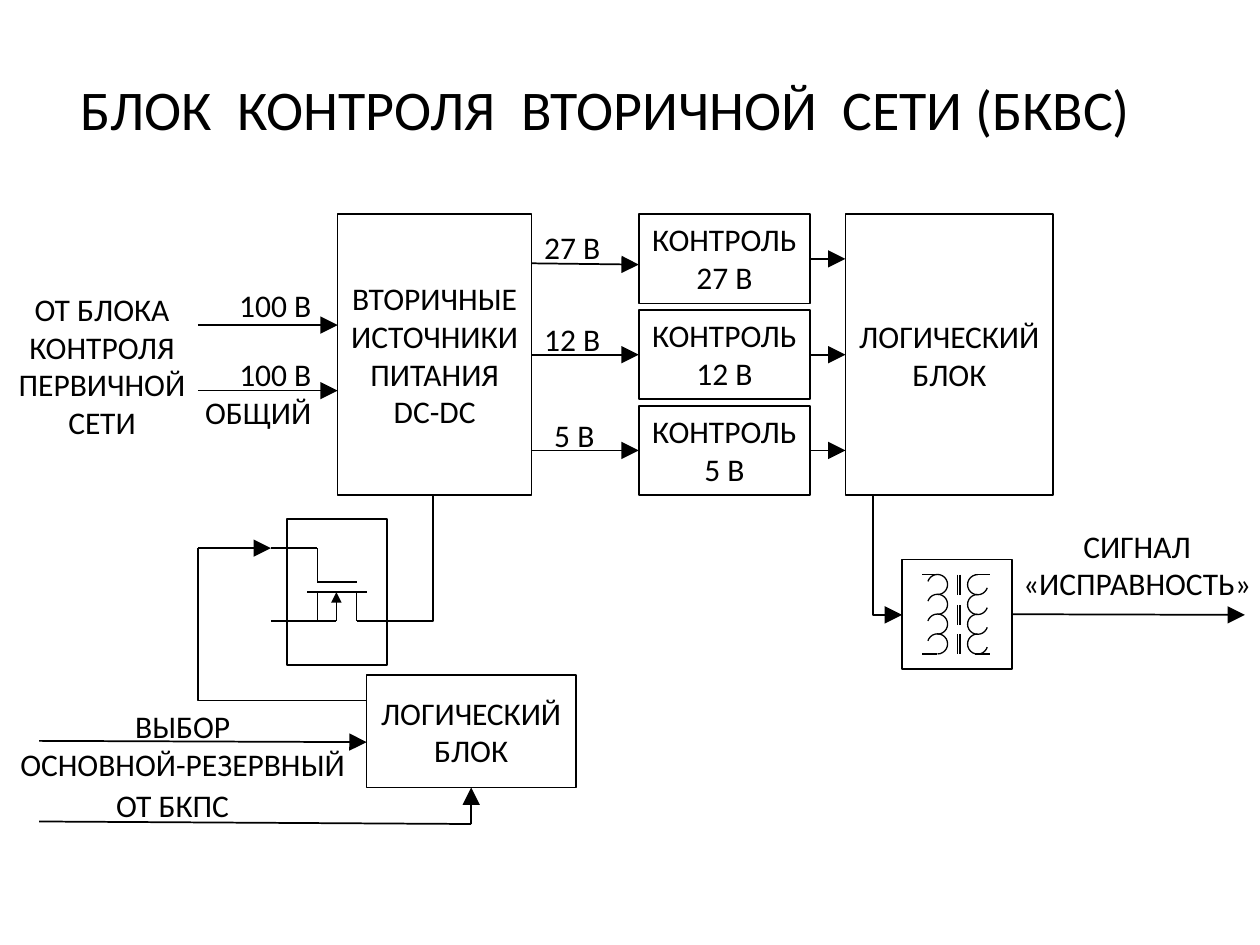
"""Block diagram of the secondary network control unit."""
from lxml.etree import SubElement
from pptx import Presentation
from pptx.dml.color import RGBColor
from pptx.enum.shapes import MSO_AUTO_SHAPE_TYPE as Preset, MSO_CONNECTOR as Link
from pptx.enum.text import MSO_ANCHOR as Anchor, MSO_AUTO_SIZE as Fit, PP_ALIGN as Align
from pptx.oxml.ns import qn
from pptx.util import Inches, Pt

COLORS = {"ink": "000000", "paper": "FFFFFF"}
COLUMNS, ROWS = 100, 75
TOP, LEFT, BOTTOM, RIGHT = range(4)


def write(shape, text, size=18, align=Align.CENTER, anchor=Anchor.TOP, wrap=False, fit=Fit.NONE):
    frame = shape.text_frame
    frame.text = text
    frame.word_wrap = wrap
    frame.auto_size = fit
    frame.vertical_anchor = anchor
    for paragraph in frame.paragraphs:
        paragraph.alignment = align
        paragraph.font.size = Pt(size)
        paragraph.font.name = "Calibri"
        paragraph.font.color.rgb = RGBColor.from_string(COLORS["ink"])


class Diagram:
    def __init__(self, deck):
        self.column = deck.slide_width / COLUMNS
        self.row = deck.slide_height / ROWS
        self.slide = deck.slides.add_slide(deck.slide_layouts[6])
        self.slide.background.fill.solid()
        self.slide.background.fill.fore_color.rgb = RGBColor.from_string(COLORS["paper"])
        self.layer = self.slide.shapes

    def group(self):
        self.layer = self.slide.shapes.add_group_shape().shapes

    def ungroup(self):
        self.layer = self.slide.shapes

    def place(self, x, y, width, height):
        return (round(x * self.column), round(y * self.row),
                round(width * self.column), round(height * self.row))

    def stroke(self, shape, weight):
        shape.line.color.rgb = RGBColor.from_string(COLORS["ink"])
        shape.line.width = Pt(weight)

    def outline(self, preset, area, weight=1):
        shape = self.layer.add_shape(preset, *self.place(*area))
        shape.shadow.inherit = False
        shape.fill.background()
        self.stroke(shape, weight)
        return shape

    def box(self, *area, text="", **style):
        shape = self.outline(Preset.RECTANGLE, area)
        if text:
            write(shape, text, **{"anchor": Anchor.MIDDLE, **style})
        return shape

    def label(self, *area, text, **style):
        write(self.layer.add_textbox(*self.place(*area)), text, **style)

    def coil_turn(self, x, y, size, rotation):
        turn = self.outline(Preset.ARC, (x, y, size, size), 0.75)
        turn.adjustments[0] = 64.9
        turn.rotation = rotation

    def line(self, *ends, kind=Link.STRAIGHT, arrow=None, weight=1, begin=None, end=None):
        link = self.layer.add_connector(kind, *self.place(*ends))
        self.stroke(link, weight)
        if begin:
            link.begin_connect(*begin)
        if end:
            link.end_connect(*end)
        if arrow:
            SubElement(link.line._get_or_add_ln(), qn("a:tailEnd"), type="triangle", w=arrow, len=arrow)
        properties = link._element.spPr
        SubElement(properties, qn("a:effectLst"))
        if kind == Link.ELBOW:
            guides = properties.find(qn("a:prstGeom")).get_or_add_avLst()
            SubElement(guides, qn("a:gd"), name="adj1", fmla="val 0")

    def arrow(self, *ends, **joins):
        self.line(*ends, arrow="lg", **joins)


def draw_transformer(diagram):
    diagram.group()
    for turn in range(4):
        for x, rotation in ((73.6, 90), (76.8, 270)):
            diagram.coil_turn(x, 45.6 + 1.57 * turn, 1.6, rotation)
    for y in (45.6, 48, 50.3):
        for x in (76, 76.2):
            diagram.line(x, y, x, y + 1.6, weight=0.75)
    for y in (45.6, 51.9):
        for x in (73.2, 77.4):
            diagram.line(x, y, x + 1.2, y, weight=0.75)
    case = diagram.box(71.6, 44.4, 8.7, 8.7)
    diagram.ungroup()
    return case


def draw_transistor(diagram):
    diagram.group()
    for ends in ((24.4, 47, 29.1, 47), (25.2, 46.2, 28.3, 46.2),
                 (25.2, 47, 25.2, 49.3), (28.3, 47, 28.3, 49.3),
                 (25.2, 43.5, 25.2, 46.2), (21.5, 43.5, 25.2, 43.5),
                 (21.5, 49.3, 26.7, 49.3), (28.3, 49.3, 32, 49.3)):
        diagram.line(*ends)
    diagram.line(26.7, 49.3, 26.7, 47, arrow="med")
    diagram.box(22.8, 41.2, 7.9, 11.6)
    diagram.ungroup()


def draw_controls(diagram, sources, logic):
    channels = (("27 В", 42.2, 17.6), ("12 В", 42.2, 24.9), ("5 В", 43, 32.5))
    for index, (voltage, label_x, label_y) in enumerate(channels):
        top = 17 + 7.6 * index
        middle = top + 3.55
        control = diagram.box(50.7, top, 13.6, 7.1, text=f"КОНТРОЛЬ\n{voltage}",
                              anchor=Anchor.TOP, fit=Fit.SHAPE_TO_FIT_TEXT)
        diagram.label(label_x, label_y, 6.5, 4, text=voltage, align=Align.LEFT)
        if index == 0:
            diagram.arrow(42.2, 20.9, 50.7, 21)
        else:
            centre = index == 1
            diagram.arrow(42.2, middle, 50.7, middle, end=(control, LEFT),
                          begin=(sources, RIGHT) if centre else None)
        diagram.arrow(64.3, middle, 67.1, middle, begin=(control, RIGHT),
                      end=(logic, LEFT) if index == 1 else None)


def main():
    deck = Presentation()
    deck.slide_width, deck.slide_height = Inches(10), Inches(7.5)
    diagram = Diagram(deck)

    diagram.label(3.1, 2.3, 90, 12.5, text="БЛОК  КОНТРОЛЯ  ВТОРИЧНОЙ  СЕТИ (БКВС)",
                  size=32, anchor=Anchor.MIDDLE, wrap=True)
    sources = diagram.box(26.8, 17, 15.4, 22.3, text="ВТОРИЧНЫЕ\nИСТОЧНИКИ\nПИТАНИЯ\nDC-DC")
    output_logic = diagram.box(67.1, 17, 16.5, 22.3, text="ЛОГИЧЕСКИЙ\nБЛОК")
    input_logic = diagram.box(29.1, 53.6, 16.6, 8.9, text="ЛОГИЧЕСКИЙ\nБЛОК")
    draw_controls(diagram, sources, output_logic)
    transformer = draw_transformer(diagram)
    draw_transistor(diagram)

    diagram.label(0.4, 22.5, 15.4, 13.1, text="ОТ БЛОКА\nКОНТРОЛЯ\nПЕРВИЧНОЙ\nСЕТИ")
    diagram.label(18, 22.2, 7.8, 4, text="100 В", align=Align.LEFT)
    diagram.label(15.2, 27.7, 10.5, 7.1, text="100 В\nОБЩИЙ", align=Align.RIGHT)
    diagram.label(80.1, 41.3, 20.3, 7.1, text="СИГНАЛ\n«ИСПРАВНОСТЬ»")
    diagram.label(0.6, 55.6, 27.8, 7.1, text="ВЫБОР\nОСНОВНОЙ-РЕЗЕРВНЫЙ", wrap=True)
    diagram.label(-0.2, 61.9, 27.8, 4, text="ОТ БКПС", wrap=True)

    for y in (25.8, 31):
        diagram.arrow(15.7, y, 26.8, y)
    diagram.arrow(69.3, 39.3, 71.6, 48.8, kind=Link.ELBOW)
    diagram.arrow(80.3, 48.8, 98.8, 48.8, begin=(transformer, RIGHT))
    diagram.line(34.4, 39.3, 32, 49.3, kind=Link.ELBOW)
    diagram.line(15.7, 43.5, 29.1, 55.6, kind=Link.ELBOW)
    diagram.arrow(15.7, 43.5, 21.5, 43.5)
    diagram.arrow(3.1, 58.8, 29.1, 58.9)
    diagram.line(3.1, 65.2, 37.4, 65.4)
    diagram.arrow(37.4, 65.4, 37.4, 62.5, end=(input_logic, BOTTOM))
    deck.save("out.pptx")


if __name__ == "__main__":
    main()
